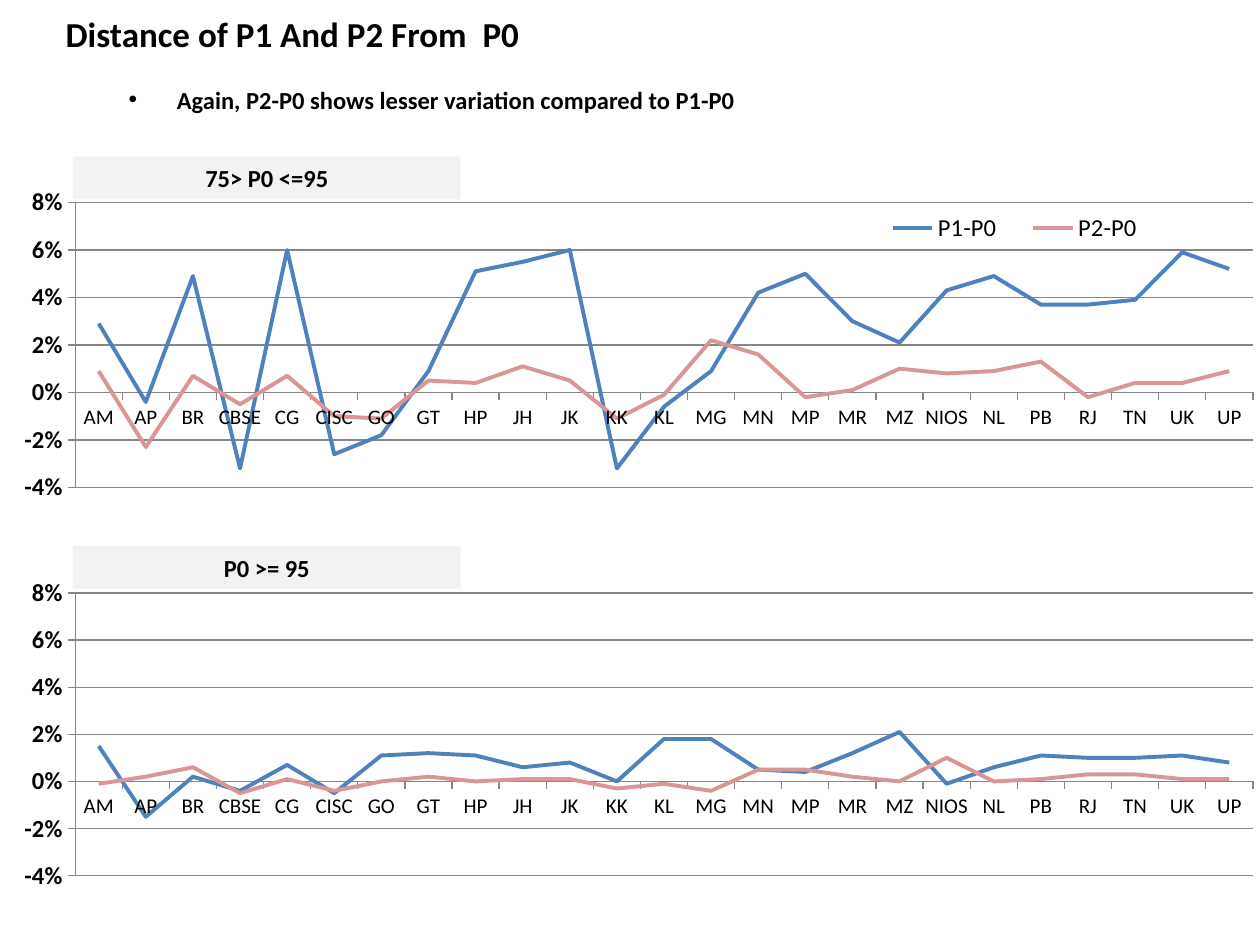
from dataclasses import dataclass

from pptx import Presentation
from pptx.chart.data import CategoryChartData
from pptx.dml.color import RGBColor
from pptx.enum.chart import XL_CHART_TYPE, XL_LEGEND_POSITION, XL_MARKER_STYLE, XL_TICK_MARK
from pptx.enum.shapes import MSO_SHAPE
from pptx.enum.text import MSO_ANCHOR, MSO_AUTO_SIZE, PP_ALIGN
from pptx.oxml import parse_xml
from pptx.oxml.ns import nsdecls, qn
from pptx.util import Cm, Pt


@dataclass(frozen=True)
class Theme:
    font: str = "Calibri"
    text: RGBColor = RGBColor(0x00, 0x00, 0x00)
    band: RGBColor = RGBColor(0xF2, 0xF2, 0xF2)
    grid: RGBColor = RGBColor(0x86, 0x86, 0x86)
    series: tuple = (RGBColor(0x4F, 0x81, 0xBD), RGBColor(0xD9, 0x96, 0x94))
    title_size: Pt = Pt(20)
    body_size: Pt = Pt(14)
    category_size: Pt = Pt(12)
    series_width: Pt = Pt(2.25)
    grid_width: Pt = Pt(0.75)


BOARDS = ("AM AP BR CBSE CG CISC GO GT HP JH JK KK KL MG MN MP MR MZ "
          "NIOS NL PB RJ TN UK UP").split()
SERIES_NAMES = ("P1-P0", "P2-P0")

MIDDLE_BAND = (
    (0.029, -0.004, 0.049, -0.032, 0.06, -0.026, -0.018, 0.009, 0.051, 0.055,
     0.06, -0.032, -0.006, 0.009, 0.042, 0.05, 0.03, 0.021, 0.043, 0.049,
     0.037, 0.037, 0.039, 0.059, 0.052),
    (0.009, -0.023, 0.007, -0.005, 0.007, -0.01, -0.011, 0.005, 0.004, 0.011,
     0.005, -0.011, -0.001, 0.022, 0.016, -0.002, 0.001, 0.01, 0.008, 0.009,
     0.013, -0.002, 0.004, 0.004, 0.009),
)
TOP_BAND = (
    (0.015, -0.015, 0.002, -0.004, 0.007, -0.005, 0.011, 0.012, 0.011, 0.006,
     0.008, 0, 0.018, 0.018, 0.005, 0.004, 0.012, 0.021, -0.001, 0.006,
     0.011, 0.01, 0.01, 0.011, 0.008),
    (-0.001, 0.002, 0.006, -0.005, 0.001, -0.004, 0, 0.002, 0, 0.001,
     0.001, -0.003, -0.001, -0.004, 0.005, 0.005, 0.002, 0, 0.01, 0,
     0.001, 0.003, 0.003, 0.001, 0.001),
)


def set_layout(parent, index, box, inner=False):
    """Place a chart part by hand; box is x, y, width, height as fractions."""
    for old in parent.findall(qn("c:layout")):
        parent.remove(old)
    target = '<c:layoutTarget val="inner"/>' if inner else ""
    modes = '<c:xMode val="edge"/><c:yMode val="edge"/>'
    sizes = "".join(f'<c:{k} val="{v}"/>' for k, v in zip("xywh", box))
    parent.insert(index, parse_xml(
        f'<c:layout {nsdecls("c")}><c:manualLayout>{target}{modes}{sizes}'
        '</c:manualLayout></c:layout>'))


class SlideBuilder:
    def __init__(self, prs, theme):
        self.theme = theme
        self.s = prs.slides.add_slide(prs.slide_layouts[5])

    def style_font(self, font, size, bold=False):
        font.name = self.theme.font
        font.size = size
        font.bold = bold
        font.color.rgb = self.theme.text

    def add_run(self, p, text, size):
        r = p.add_run()
        r.text = text
        self.style_font(r.font, size, bold=True)

    def title(self, text, bullet, left, top, width, height):
        sp = self.s.shapes.title
        sp.left, sp.top, sp.width, sp.height = left, top, width, height
        tf = sp.text_frame
        tf.word_wrap = True
        tf.auto_size = MSO_AUTO_SIZE.SHAPE_TO_FIT_TEXT
        tf.vertical_anchor = MSO_ANCHOR.TOP
        p = tf.paragraphs[0]
        p.alignment = PP_ALIGN.LEFT
        p.space_before = Pt(0)
        self.add_run(p, text, self.theme.title_size)

        p = tf.add_paragraph()
        p.alignment = PP_ALIGN.LEFT
        p.level = 1
        p.space_before = Pt(17)
        self.add_run(p, bullet, self.theme.body_size)
        pPr = p._p.get_or_add_pPr()
        pPr.set("marL", str(Cm(2.24)))
        pPr.set("indent", str(Cm(-0.97)))
        pPr.append(parse_xml(f'<a:buFont {nsdecls("a")} typeface="Arial"/>'))
        pPr.append(parse_xml(f'<a:buChar {nsdecls("a")} char="•"/>'))

    def band_label(self, text, left, top, width, height):
        sp = self.s.shapes.add_shape(MSO_SHAPE.RECTANGLE, left, top, width, height)
        sp.shadow.inherit = False
        sp.fill.solid()
        sp.fill.fore_color.rgb = self.theme.band
        sp.line.fill.background()
        tf = sp.text_frame
        tf.word_wrap = True
        tf.auto_size = MSO_AUTO_SIZE.SHAPE_TO_FIT_TEXT
        p = tf.paragraphs[0]
        p.alignment = PP_ALIGN.CENTER
        self.add_run(p, text, self.theme.body_size)

    def line_chart(self, values, left, top, width, height, plot, legend=None):
        data = CategoryChartData(number_format="0%")
        data.categories = BOARDS
        for name, series_values in zip(SERIES_NAMES, values):
            data.add_series(name, series_values)
        chart = self.s.shapes.add_chart(
            XL_CHART_TYPE.LINE, left, top, width, height, data).chart
        chart.has_title = False
        self.style_font(chart.font, self.theme.body_size)
        chart.plots[0].vary_by_categories = False
        set_layout(chart._chartSpace.chart.plotArea, 0, plot, inner=True)

        for series, color in zip(chart.plots[0].series, self.theme.series):
            series.smooth = False
            series.marker.style = XL_MARKER_STYLE.NONE
            self.style_line(series.format.line, color, self.theme.series_width)
        self.style_axes(chart.category_axis, chart.value_axis)

        chart.has_legend = legend is not None
        if legend:
            chart.legend.position = XL_LEGEND_POSITION.RIGHT
            chart.legend.include_in_layout = False
            self.style_font(chart.legend.font, self.theme.body_size)
            set_layout(chart.legend._element, 1, legend)

    def style_line(self, line, color, width):
        line.color.rgb = color
        line.width = width

    def style_axes(self, categories, values):
        values.minimum_scale, values.maximum_scale = -0.04, 0.08
        values.major_unit = 0.02
        values.has_major_gridlines = True
        values.tick_labels.number_format = "0%"
        values.tick_labels.number_format_is_linked = False
        self.style_font(values.tick_labels.font, self.theme.body_size, bold=True)
        self.style_font(categories.tick_labels.font, self.theme.category_size)
        for axis in (categories, values):
            axis.major_tick_mark = XL_TICK_MARK.OUTSIDE
            axis.minor_tick_mark = XL_TICK_MARK.NONE
        for part in (categories, values, values.major_gridlines):
            self.style_line(part.format.line, self.theme.grid, self.theme.grid_width)


def main():
    prs = Presentation()
    prs.slide_width, prs.slide_height = Cm(25.4), Cm(19.05)
    slide = SlideBuilder(prs, Theme())
    slide.title("Distance of P1 And P2 From  P0",
                "Again, P2-P0 shows lesser variation compared to P1-P0",
                Cm(1.07), Cm(0.13), Cm(22.86), Cm(2.31))

    panels = (
        ("75> P0 <=95", MIDDLE_BAND, Cm(3.78), (0.06, 0.042, 0.94, 0.915),
         (0.69, 0.06, 0.24, 0.13)),
        ("P0 >= 95", TOP_BAND, Cm(11.63), (0.06, 0.051, 0.94, 0.898), None),
    )
    for label, values, top, plot, legend in panels:
        slide.line_chart(values, Cm(0), top, Cm(25.27), Cm(6.35), plot, legend)
        slide.band_label(label, Cm(1.47), top - Cm(0.62), Cm(7.82), Cm(0.86))

    prs.save("out.pptx")


if __name__ == "__main__":
    main()
